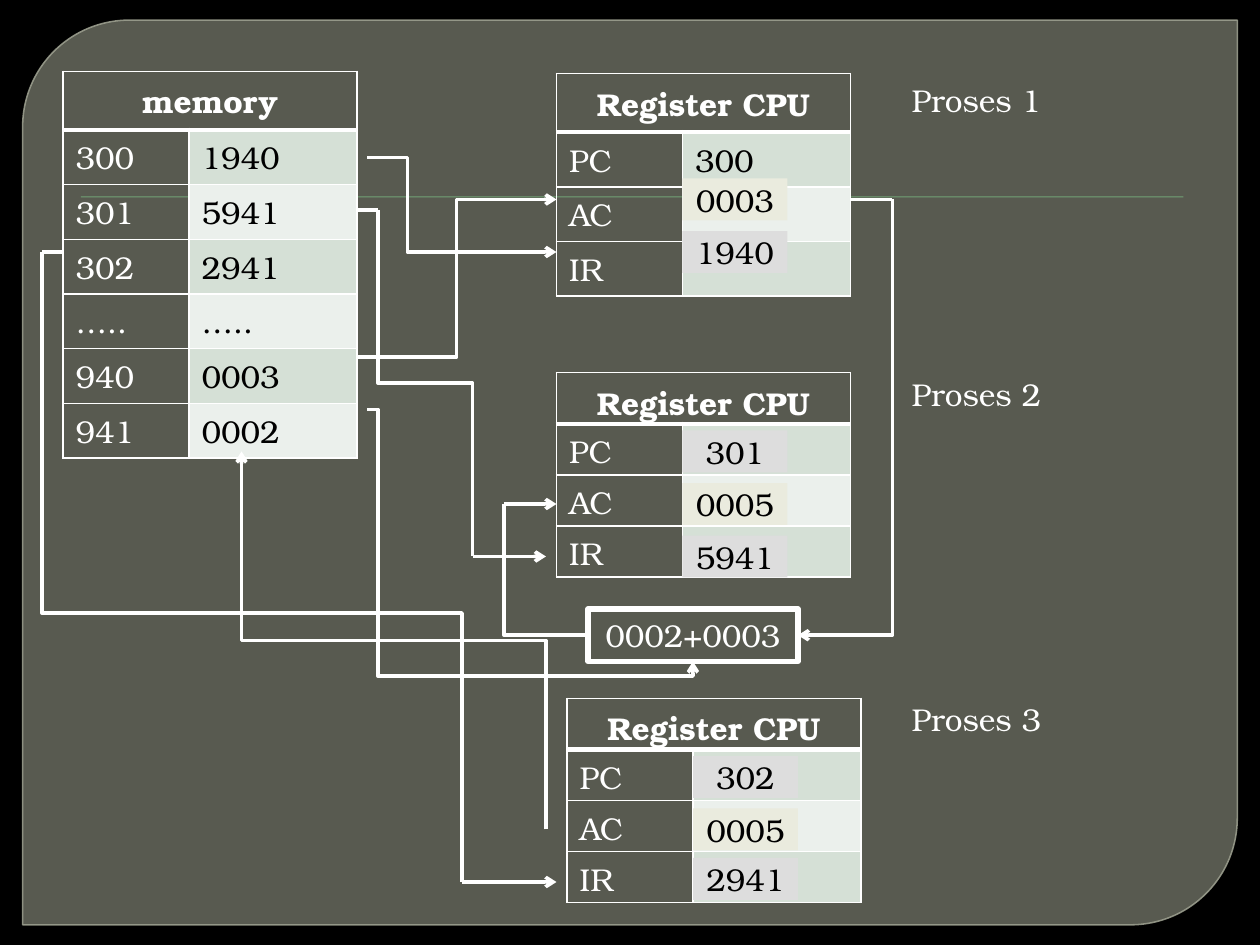
from lxml import etree
from pptx import Presentation, util as u
from pptx.dml.color import RGBColor
from pptx.enum import shapes, text
from pptx.oxml.ns import qn

COLOURS = {
    "background": "000000", "panel": "888B7B", "panel edge": "9DA090", "rule": "72A376",
    "light": "FFFFFF", "dark": "000000", "odd row": "D5E0D6", "even row": "EBF0EC",
    "card": "DDDDDD", "accumulator": "EAEBDE",
}
FONT = {"name": "TeX Gyre Bonum", "size": u.Pt(18)}
FRAME = {
    "word_wrap": True, "vertical_anchor": text.MSO_ANCHOR.MIDDLE,
    "margin_left": 0, "margin_right": 0, "margin_top": 0, "margin_bottom": 0,
}
COLUMNS, ROWS = 120, 90
TABLE_COLUMNS = (12, 16)
TABLE_ROW = 4.87
CARD_SIZE = (10, 4)
LABEL_SIZE = (20, 5)

MEMORY = [("300", "1940"), ("301", "5941"), ("302", "2941"),
          ("…..", "….."), ("940", "0003"), ("941", "0002")]

# Process number, label row, table position, PC in the table, cards as (row, value, colour)
PROCESSES = [
    (1, 7, (53, 7), "300", [(17, "0003", "accumulator"), (22, "1940", "card")]),
    (2, 35, (53, 35.5), "",
     [(41, "301", "card"), (46, "0005", "accumulator"), (51, "5941", "card")]),
    (3, 66, (54, 66.5), "",
     [(72, "302", "card"), (77, "0005", "accumulator"), (81.7, "2941", "card")]),
]

# Corner points of each connector, and whether it ends in an arrowhead
CONNECTORS = [
    ([(35, 15), (38.8, 15), (38.8, 24), (53, 24)], True),
    ([(34, 34), (43.5, 34), (43.5, 19), (53, 19)], True),
    ([(34, 20), (36, 20)], False),
    ([(36, 20), (36, 36.5), (45, 36.5), (45, 53)], False),
    ([(45, 53), (52, 53)], True),
    ([(35, 39), (36, 39), (36, 64.4), (66, 64.4), (66, 63)], True),
    ([(81, 19), (85, 19)], False),
    ([(85, 19), (85, 60.5), (76, 60.5)], True),
    ([(56, 60.5), (48, 60.5), (48, 48)], False),
    ([(48, 48), (53, 48)], True),
    ([(6, 24), (4, 24)], False),
    ([(4, 24), (4, 58.4), (44, 58.4), (44, 84)], False),
    ([(44, 84), (53, 84)], True),
    ([(52, 79), (52, 61), (23, 61), (23, 43)], True),
]


def colour(name):
    return RGBColor.from_string(COLOURS[name])


def apply(target, values):
    for name, value in values.items():
        setattr(target, name, value)


def set_alpha(fill_parent, percent):
    code = fill_parent.find(qn("a:solidFill")).find(qn("a:srgbClr"))
    etree.SubElement(code, qn("a:alpha"), val=str(percent * 1000))


class Diagram:
    """Draws on one slide, with positions in grid columns and rows."""

    def __init__(self, presentation):
        self.slide = presentation.slides.add_slide(presentation.slide_layouts[6])
        self.column = presentation.slide_width / COLUMNS
        self.row = presentation.slide_height / ROWS
        fill = self.slide.background.fill
        fill.solid()
        fill.fore_color.rgb = colour("background")

    def place(self, *lengths):
        """Turn alternating columns and rows into lengths on the slide."""
        return [round(length * (self.row if index % 2 else self.column))
                for index, length in enumerate(lengths)]

    def add_words(self, frame, words, ink, centred=False, bold=False):
        paragraph = frame.paragraphs[0]
        if centred:
            paragraph.alignment = text.PP_ALIGN.CENTER
        run = paragraph.add_run()
        run.text = words
        apply(run.font, {**FONT, "bold": bold})
        run.font.color.rgb = colour(ink)

    def shape(self, box, fill=None, line=None, width=1, kind=shapes.MSO_SHAPE.RECTANGLE):
        shape = self.slide.shapes.add_shape(kind, *self.place(*box))
        shape.shadow.inherit = False
        if fill:
            shape.fill.solid()
            shape.fill.fore_color.rgb = colour(fill)
        else:
            shape.fill.background()
        if line:
            shape.line.color.rgb = colour(line)
            shape.line.width = u.Pt(width)
        else:
            shape.line.fill.background()
        return shape

    def panel(self, box):
        panel = self.shape(box, "panel", "panel edge", 0.87,
                           shapes.MSO_SHAPE.ROUND_2_DIAG_RECTANGLE)
        panel.adjustments[0], panel.adjustments[1] = 0.118, 0
        properties = panel._element.spPr
        set_alpha(properties, 65)
        set_alpha(properties.find(qn("a:ln")), 88)

    def card(self, box, words, ink="dark", **style):
        frame = self.shape(box, **style).text_frame
        apply(frame, FRAME)
        self.add_words(frame, words, ink, centred=True)

    def label(self, box, words):
        frame = self.slide.shapes.add_textbox(*self.place(*box)).text_frame
        apply(frame, FRAME)
        self.add_words(frame, words, "light", centred=True)

    def borders(self, cell, bottom):
        properties = cell._tc.get_or_add_tcPr()
        for index, side in enumerate(("lnL", "lnR", "lnT", "lnB")):
            width = bottom if side == "lnB" else 1
            line = etree.Element(qn(f"a:{side}"), w=str(int(u.Pt(width))))
            fill = etree.SubElement(line, qn("a:solidFill"))
            etree.SubElement(fill, qn("a:srgbClr"), val=COLOURS["light"])
            properties.insert(index, line)

    def table(self, position, heading, records):
        count = len(records) + 1
        size = (sum(TABLE_COLUMNS), TABLE_ROW * count)
        table = self.slide.shapes.add_table(count, 2, *self.place(*position, *size)).table
        table.first_row = table.horz_banding = False
        for column, width in zip(table.columns, TABLE_COLUMNS):
            column.width = round(width * self.column)
        table.cell(0, 0).merge(table.cell(0, 1))
        for row, values in enumerate([(heading, "")] + records):
            for column, value in enumerate(values):
                cell = table.cell(row, column)
                filled = row and column
                if filled:
                    cell.fill.solid()
                    cell.fill.fore_color.rgb = colour("odd row" if row % 2 else "even row")
                else:
                    cell.fill.background()
                self.borders(cell, bottom=1 if row else 3)
                if value:
                    self.add_words(cell.text_frame, value, "dark" if filled else "light",
                                   centred=not row, bold=not row)

    def connector(self, corners, arrow):
        """Draw a straight or bent connector through the corners."""
        points = [self.place(*corner) for corner in corners]
        begin, end = points[0], points[-1]
        bent = len(points) > 2
        upright = bent and points[1][0] == begin[0]
        first_axis = 1 if upright else 0
        ends = (*begin, *end)
        if upright:  # laid out sideways, then turned by 270 degrees
            middle_x, middle_y = (begin[0] + end[0]) / 2, (begin[1] + end[1]) / 2
            ends = [round(value) for x, y in (begin, end)
                    for value in (middle_x - y + middle_y, middle_y + x - middle_x)]
        kind = shapes.MSO_CONNECTOR.ELBOW if bent else shapes.MSO_CONNECTOR.STRAIGHT
        connector = self.slide.shapes.add_connector(kind, *ends)
        connector.line.color.rgb = colour("light")
        connector.line.width = u.Pt(2)
        properties = connector._element.spPr
        if upright:
            properties.find(qn("a:xfrm")).set("rot", str(270 * 60000))
        if bent:
            geometry = properties.find(qn("a:prstGeom"))
            geometry.set("prst", f"bentConnector{len(points) - 1}")
            for index, point in enumerate(points[1:-2]):
                axis = (first_axis + index) % 2
                share = (point[axis] - begin[axis]) / (end[axis] - begin[axis])
                etree.SubElement(geometry.find(qn("a:avLst")), qn("a:gd"),
                                 name=f"adj{index + 1}", fmla=f"val {round(share * 100000)}")
        if arrow:
            etree.SubElement(properties.find(qn("a:ln")), qn("a:tailEnd"), type="arrow")
        etree.SubElement(properties, qn("a:effectLst"))


def main():
    presentation = Presentation()
    presentation.slide_width, presentation.slide_height = u.Inches(10), u.Inches(7.5)
    diagram = Diagram(presentation)
    diagram.panel((2.16, 1.92, 115.68, 86.16))
    diagram.shape((7.7, 18.7, 105, 0.1), "rule")
    diagram.table((6, 6.8), "memory", MEMORY)
    for number, label_row, position, counter, _ in PROCESSES:
        diagram.table(position, "Register CPU", [("PC", counter), ("AC", ""), ("IR", "")])
        diagram.label((83, label_row, *LABEL_SIZE), f"Proses {number}")
    diagram.card((56, 58, *LABEL_SIZE), "0002+0003", "light", line="light", width=3)
    for corners, arrow in CONNECTORS:
        diagram.connector(corners, arrow)
    for _, _, (left, _), _, cards in PROCESSES:
        for row, value, fill in cards:
            diagram.card((left + TABLE_COLUMNS[0], row, *CARD_SIZE), value, fill=fill)
    presentation.save("out.pptx")


if __name__ == "__main__":
    main()
